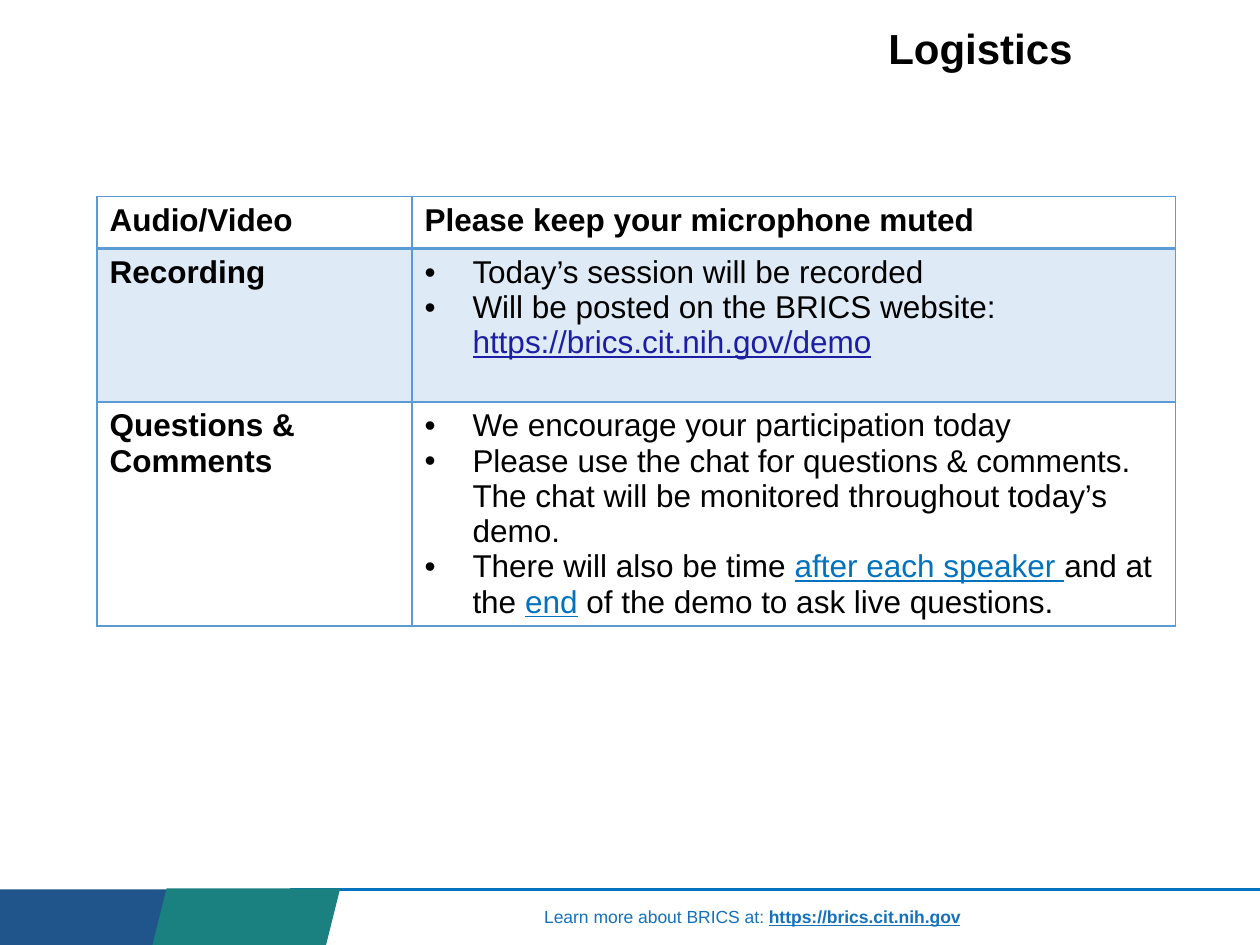
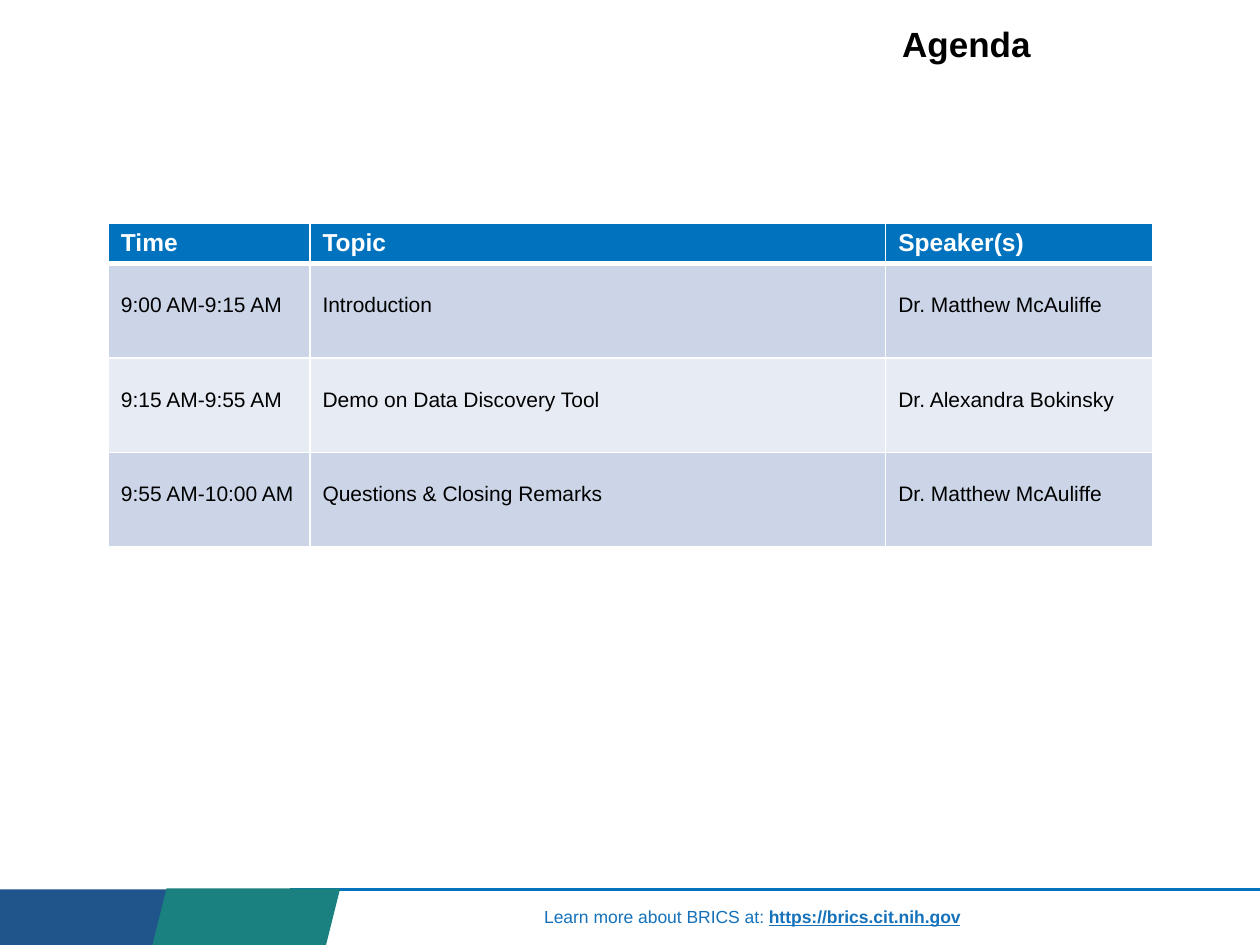
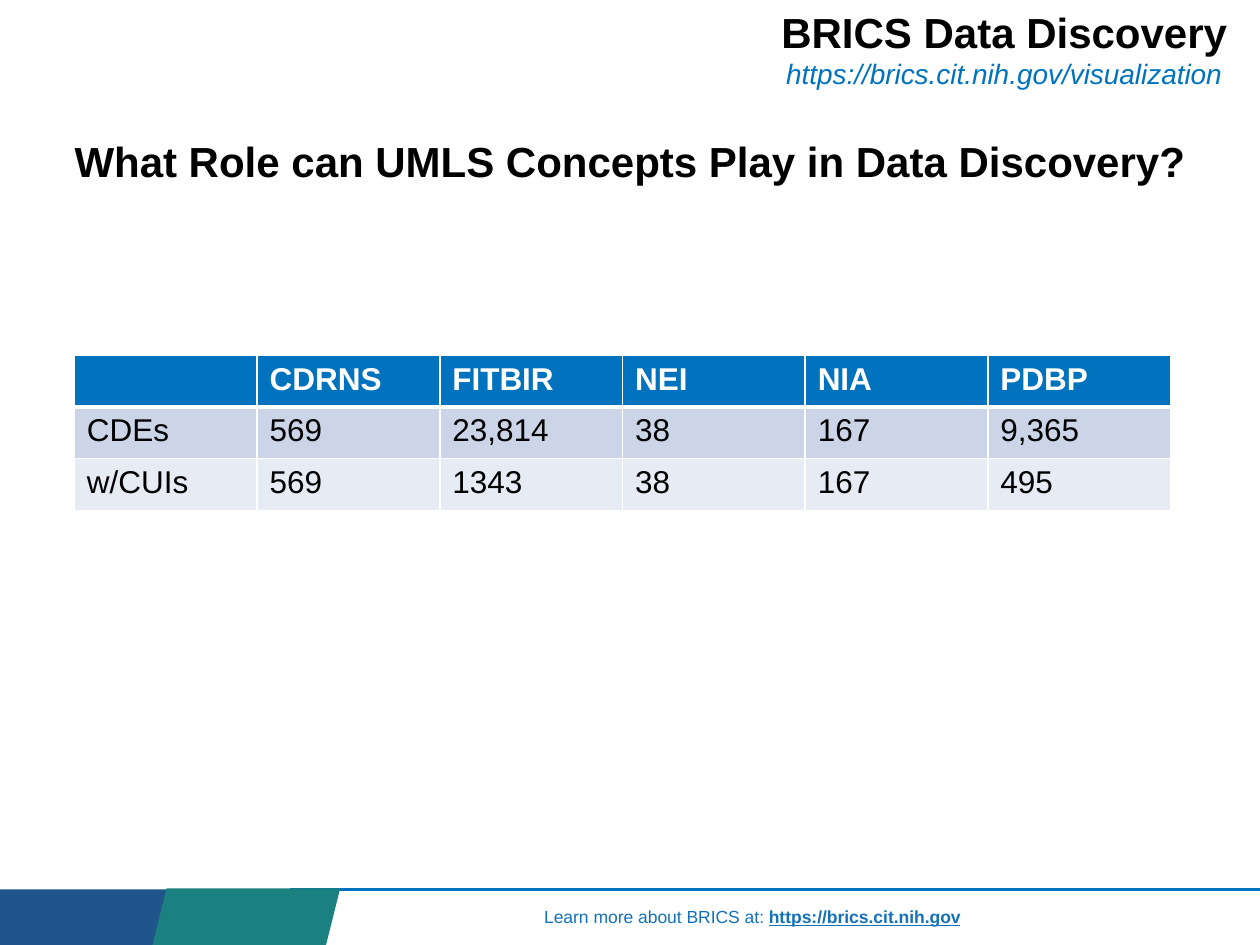
from dataclasses import dataclass, field
from lxml import etree
from pptx import Presentation
from pptx.dml.color import RGBColor
from pptx.enum.shapes import MSO_CONNECTOR, MSO_SHAPE
from pptx.enum.text import MSO_ANCHOR, MSO_AUTO_SIZE, PP_ALIGN
from pptx.oxml.ns import qn
from pptx.util import Inches, Pt

STRAIGHT = MSO_CONNECTOR.STRAIGHT
RECT, SLANT = MSO_SHAPE.RECTANGLE, MSO_SHAPE.PARALLELOGRAM
TOP, MIDDLE = MSO_ANCHOR.TOP, MSO_ANCHOR.MIDDLE
LEFT, CENTER = PP_ALIGN.LEFT, PP_ALIGN.CENTER
FIXED = MSO_AUTO_SIZE.NONE


@dataclass
class Theme:
    font: str = "Arial"
    blue: str = "0072BE"
    navy: str = "1F558A"
    teal: str = "1A8080"
    sky: str = "5B9BD5"
    pale: str = "DEEBF7"
    band: str = "CCD5E8"
    light: str = "E7EBF4"
    white: str = "FFFFFF"
    head: int = 24
    mid: int = 20
    body: int = 18
    sub: int = 16
    label: int = 14
    small: int = 12
    foot: int = 10
    looks: dict = field(default_factory=lambda: {
        "plain": ("000000", False, False, False),
        "bold": ("000000", True, False, False),
        "white": ("FFFFFF", True, False, False),
        "link": ("1D1EA3", False, True, False),
        "key": ("0072BE", False, True, False),
        "site": ("0072BE", False, False, True),
        "foot": ("1471BA", False, False, False),
        "home": ("1471BA", True, True, False),
    })


theme = Theme()


def write(par, parts, size):
    for text, look in parts:
        run = par.add_run()
        run.text = text
        font = run.font
        font.name, font.size = theme.font, Pt(size)
        tint, font.bold, font.underline, font.italic = theme.looks[look]
        font.color.rgb = RGBColor.from_string(tint)


def edge(cell, widths, tint):
    props = cell._tc.get_or_add_tcPr()
    for place, (side, width) in enumerate(zip("LRTB", widths)):
        line = etree.Element(qn(f"a:ln{side}"), w=str(Pt(width)))
        fill = etree.SubElement(line, qn("a:solidFill"))
        etree.SubElement(fill, qn("a:srgbClr"), val=tint)
        props.insert(place, line)


deck = Presentation()
deck.slide_width, deck.slide_height = Inches(10), Inches(7.5)
layout = deck.slide_layouts.get_by_name("Title Only")

titles = [
    ((6.95, 0.14, 1.68, 0.53), MIDDLE, LEFT, 0.9,
     [("Logistics", "bold", theme.head)]),
    ((7.06, 0.13, 1.33, 0.48), MIDDLE, LEFT, 0.9,
     [("Agenda", "bold", theme.mid)]),
    ((5.94, 0, 4.06, 1.18), TOP, CENTER, 1.0,
     [("BRICS Data Discovery", "bold", theme.head),
      ("https://brics.cit.nih.gov/visualization", "site", theme.sub)]),
]

rules = [
    ["Audio/Video", "Please keep your microphone muted"],
    ["Recording", [
        [("Today’s session will be recorded", "plain")],
        [("Will be posted on the BRICS website: ", "plain"),
         ("https://brics.cit.nih.gov/demo", "link")],
    ]],
    ["Questions & Comments", [
        [("We encourage your participation today", "plain")],
        [("Please use the chat for questions & comments. The chat will be "
          "monitored throughout today’s demo.", "plain")],
        [("There will also be time ", "plain"),
         ("after each speaker ", "key"), ("and at the ", "plain"),
         ("end", "key"), (" of the demo to ask live questions.", "plain")],
    ]],
]
agenda = [
    ["Time", "Topic", "Speaker(s)"],
    ["9:00 AM-9:15 AM", "Introduction", "Dr. Matthew McAuliffe"],
    ["9:15 AM-9:55 AM", "Demo on Data Discovery Tool", "Dr. Alexandra Bokinsky"],
    ["9:55 AM-10:00 AM", "Questions & Closing Remarks", "Dr. Matthew McAuliffe"],
]
counts = [
    ["", "CDRNS", "FITBIR", "NEI", "NIA", "PDBP"],
    ["CDEs", "569", "23,814", "38", "167", "9,365"],
    ["w/CUIs", "569", "1343", "38", "167", "495"],
]

blues = (theme.blue, theme.band, theme.light)
grids = [
    dict(data=rules, at=(0.77, 1.56), cols=[2.5, 6.06], rows=[0.41, 1.22, 1.78],
         fills=(theme.white, theme.pale, theme.white), looks=("bold", "bold"),
         sizes=(theme.body, theme.body), rim=theme.sky, rule=2, pad=0.05),
    dict(data=agenda, at=(0.86, 1.77), cols=[1.6, 4.57, 2.12],
         rows=[0.32] + [0.75] * 3, fills=blues, looks=("white", "plain"),
         sizes=(theme.label, theme.small), rim=theme.white, rule=3, pad=0.24),
    dict(data=counts, at=(0.59, 2.82), cols=[1.45] * 6, rows=[0.41] * 3,
         fills=blues, looks=("white", "plain"),
         sizes=(theme.body, theme.body), rim=theme.white, rule=3, pad=0.05),
]

for (box, anchor, align, space, lines), grid in zip(titles, grids):
    slide = deck.slides.add_slide(layout)
    title = slide.shapes.title
    title.left, title.top, title.width, title.height = map(Inches, box)
    frame = title.text_frame
    frame.auto_size, frame.vertical_anchor = FIXED, anchor
    for num, (text, look, size) in enumerate(lines):
        par = frame.add_paragraph() if num else frame.paragraphs[0]
        par.alignment, par.line_spacing = align, space
        write(par, [(text, look)], size)

    data, cols, rows = grid["data"], grid["cols"], grid["rows"]
    size = map(Inches, (*grid["at"], sum(cols), sum(rows)))
    table = slide.shapes.add_table(len(rows), len(cols), *size).table
    table.horz_banding = False
    for col, width in zip(table.columns, cols):
        col.width = Inches(width)
    for r, high in enumerate(rows):
        table.rows[r].height = Inches(high)
        part = min(r, 1)
        tint = grid["fills"][2 - r % 2 if r else 0]
        for c, item in enumerate(data[r]):
            cell = table.cell(r, c)
            cell.fill.solid()
            cell.fill.fore_color.rgb = RGBColor.from_string(tint)
            above = grid["rule"] if r == 1 else 1
            below = grid["rule"] if r == 0 else 1
            edge(cell, (1, 1, above, below), grid["rim"])
            if r:
                cell.margin_top = Inches(grid["pad"])
            listed = isinstance(item, list)
            paras = item if listed else [[(item, grid["looks"][part])]]
            for num, parts in enumerate(paras):
                frame = cell.text_frame
                par = frame.add_paragraph() if num else frame.paragraphs[0]
                if listed:
                    props = par._p.get_or_add_pPr()
                    props.set("marL", str(Inches(0.38)))
                    props.set("indent", str(-Inches(0.38)))
                    etree.SubElement(props, qn("a:buFont"), typeface=theme.font)
                    etree.SubElement(props, qn("a:buChar"), char="•")
                write(par, parts, grid["sizes"][part])

ask = slide.shapes.add_textbox(*map(Inches, (0.42, 1.03, 9.16, 0.5)))
ask.text_frame.word_wrap = True
par = ask.text_frame.paragraphs[0]
par.alignment = CENTER
write(par, [("What Role can UMLS Concepts Play in Data Discovery?", "bold")],
      theme.head)

line = slide.shapes.add_connector(
    STRAIGHT, *map(Inches, (2.3, 7.06, 10, 7.06)))
line.line.color.rgb = RGBColor.from_string(theme.blue)
line.line.width = Pt(2)
etree.SubElement(line.element.spPr, qn("a:effectLst"))

blocks = []
for kind, box, tint in [
    (RECT, (0, 7.06, 1.37, 0.44), theme.navy),
    (SLANT, (1.21, 7.05, 1.49, 0.45), theme.teal),
]:
    block = slide.shapes.add_shape(kind, *map(Inches, box))
    block.shadow.inherit = False
    block.fill.solid()
    block.fill.fore_color.rgb = RGBColor.from_string(tint)
    block.line.fill.background()
    blocks.append(block)

foot = slide.shapes.add_textbox(*map(Inches, (4.22, 7.14, 3.54, 0.27)))
foot.text_frame.word_wrap = False
write(foot.text_frame.paragraphs[0],
      [("Learn more about BRICS at: ", "foot"),
       ("https://brics.cit.nih.gov", "home")], theme.foot)

master = deck.slide_master.shapes.element
for num, shape in enumerate([line, blocks[0], foot, blocks[1]], 101):
    shape.element.xpath(".//p:cNvPr")[0].set("id", str(num))
    master.append(shape.element)

deck.save("out.pptx")
